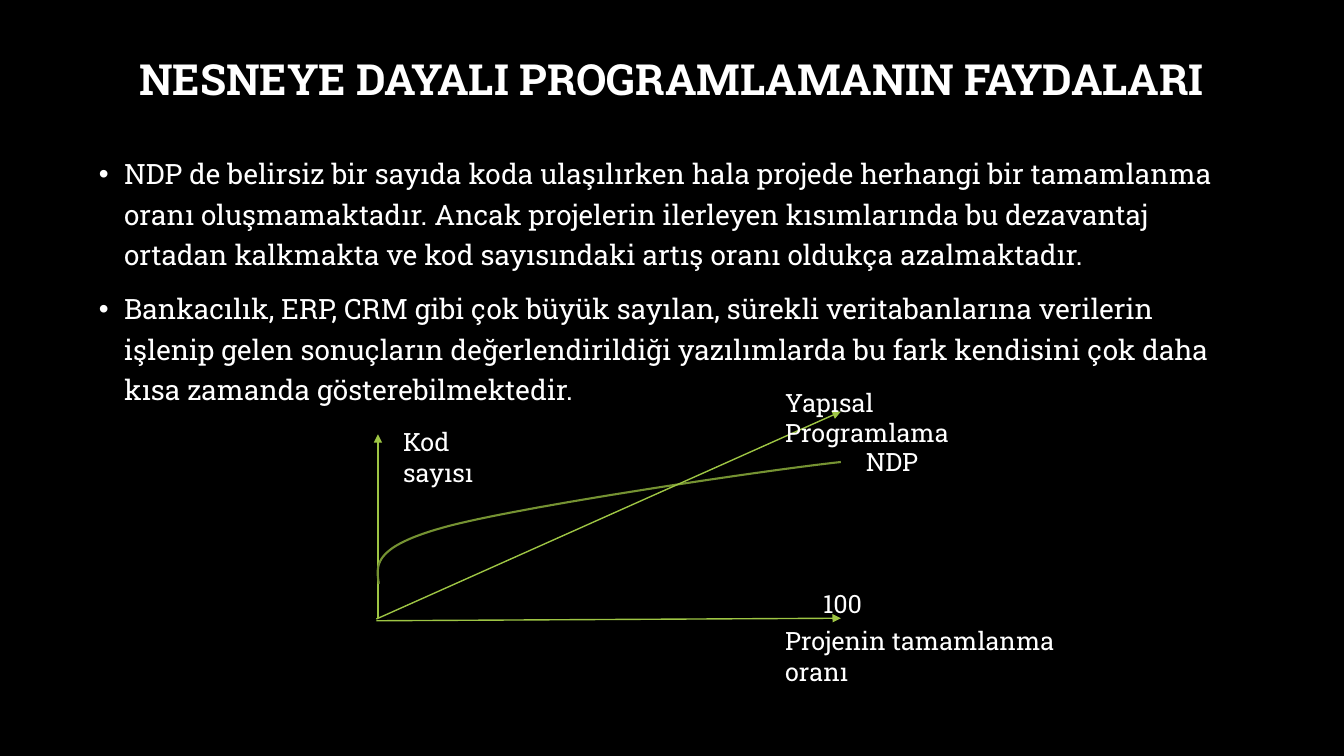
from dataclasses import dataclass

from lxml import etree
from pptx import Presentation
from pptx.dml.color import RGBColor
from pptx.enum.shapes import MSO_CONNECTOR
from pptx.enum.text import MSO_ANCHOR, MSO_AUTO_SIZE, PP_ALIGN
from pptx.oxml.ns import qn
from pptx.slide import Slide
from pptx.text.text import TextFrame, _Paragraph
from pptx.util import Emu, Inches, Pt

STRAIGHT = MSO_CONNECTOR.STRAIGHT
MIDDLE, TOP = MSO_ANCHOR.MIDDLE, MSO_ANCHOR.TOP
CENTER, LEFT = PP_ALIGN.CENTER, PP_ALIGN.LEFT
NO_AUTOFIT = MSO_AUTO_SIZE.NONE

SLIDE_WIDTH, SLIDE_HEIGHT = Inches(13.33), Inches(7.5)
COLUMNS, ROWS = 160, 90
FONT = "Roboto Slab"
BLACK, WHITE, LIME, OLIVE = "000000", "FFFFFF", "9EC544", "759232"

TITLE = "NESNEYE DAYALI PROGRAMLAMANIN FAYDALARI"
BENEFITS = (
    "NDP de belirsiz bir sayıda koda ulaşılırken hala projede herhangi bir "
    "tamamlanma oranı oluşmamaktadır. Ancak projelerin ilerleyen kısımlarında "
    "bu dezavantaj ortadan kalkmakta ve kod sayısındaki artış oranı oldukça "
    "azalmaktadır.",
    "Bankacılık, ERP, CRM gibi çok büyük sayılan, sürekli veritabanlarına "
    "verilerin işlenip gelen sonuçların değerlendirildiği yazılımlarda bu fark "
    "kendisini çok daha kısa zamanda gösterebilmektedir.",
)

Point = tuple[float, float]


@dataclass(frozen=True)
class Label:
    text: str
    column: float
    row: float
    columns: float


@dataclass(frozen=True)
class Arrow:
    start: Point
    end: Point


LABEL_ROWS = 4.8
LABELS = (
    Label("Projenin tamamlanma oranı", 92.3, 73.9, 36.7),
    Label("100", 96.8, 69.4, 7.1),
    Label("Kod sayısı", 46.8, 50.2, 14.4),
    Label("Yapısal Programlama", 92.3, 45.5, 31.7),
    Label("NDP", 101.9, 52.6, 10),
)
ARROWS = (
    Arrow((45, 73.6), (45, 51.7)),
    Arrow((44.8, 73.9), (100.1, 73.6)),
    Arrow((44.8, 73.7), (100.1, 49)),
)
NDP_CURVE = (
    ((45.1, 69.5), (44.75, 67.2), (44.4, 65), (53.5, 62.6)),
    ((53.5, 62.6), (62.7, 60.2), (90.9, 56), (100.1, 55)),
)
CURVE_STEPS = 30


def x(columns: float) -> Emu:
    return Emu(round(SLIDE_WIDTH * columns / COLUMNS))


def y(rows: float) -> Emu:
    return Emu(round(SLIDE_HEIGHT * rows / ROWS))


def color(value: str) -> RGBColor:
    return RGBColor.from_string(value)


def add_run(paragraph: _Paragraph, text: str, size: float, bold: bool = False) -> None:
    run = paragraph.add_run()
    run.text = text
    run.font.name = FONT
    run.font.size = Pt(size)
    run.font.bold = bold
    run.font.color.rgb = color(WHITE)


def add_text_frame(slide: Slide, column: float, row: float, columns: float, rows: float) -> TextFrame:
    text_frame = slide.shapes.add_textbox(x(column), y(row), x(columns), y(rows)).text_frame
    text_frame.word_wrap = True
    text_frame.vertical_anchor = TOP
    return text_frame


def add_title(slide: Slide) -> None:
    title = slide.shapes.title
    title.left, title.top, title.width, title.height = x(12), y(3.5), x(135.9), y(12.5)
    text_frame = title.text_frame
    text_frame.word_wrap = True
    text_frame.auto_size = NO_AUTOFIT
    text_frame.vertical_anchor = MIDDLE
    paragraph = text_frame.paragraphs[0]
    paragraph.alignment = CENTER
    paragraph.line_spacing = 0.9
    add_run(paragraph, TITLE, 30.6, bold=True)


def add_benefits(slide: Slide) -> None:
    text_frame = add_text_frame(slide, 10.6, 17.3, 138, 57.1)
    for index, benefit in enumerate(BENEFITS):
        paragraph = text_frame.add_paragraph() if index else text_frame.paragraphs[0]
        paragraph.alignment = LEFT
        paragraph.line_spacing = 1.2
        paragraph.space_before = Pt(10)
        properties = paragraph._p.get_or_add_pPr()
        properties.set("marL", str(Inches(0.25)))
        properties.set("indent", str(-Inches(0.25)))
        etree.SubElement(properties, qn("a:buFont"), typeface="Arial")
        etree.SubElement(properties, qn("a:buChar"), char="•")
        add_run(paragraph, benefit, 20)


def add_arrow(slide: Slide, arrow: Arrow) -> None:
    (start_column, start_row), (end_column, end_row) = arrow.start, arrow.end
    connector = slide.shapes.add_connector(
        STRAIGHT, x(start_column), y(start_row), x(end_column), y(end_row)
    )
    connector.line.color.rgb = color(LIME)
    connector.line.width = Pt(1)
    etree.SubElement(connector.line._get_or_add_ln(), qn("a:tailEnd"), type="triangle")
    etree.SubElement(connector._element.spPr, qn("a:effectLst"))


def bezier_point(controls: tuple[Point, ...], share: float) -> tuple[Emu, Emu]:
    rest = 1 - share
    weights = (rest**3, 3 * rest**2 * share, 3 * rest * share**2, share**3)
    column, row = (
        sum(weight * control[axis] for weight, control in zip(weights, controls))
        for axis in (0, 1)
    )
    return x(column), y(row)


def add_ndp_curve(slide: Slide) -> None:
    start, *points = [
        bezier_point(controls, step / CURVE_STEPS)
        for controls in NDP_CURVE
        for step in range(CURVE_STEPS + 1)
    ]
    builder = slide.shapes.build_freeform(*start)
    builder.add_line_segments(points, close=False)
    curve = builder.convert_to_shape()
    curve.shadow.inherit = False
    curve.fill.background()
    curve.line.color.rgb = color(OLIVE)
    curve.line.width = Pt(1.5)


def add_label(slide: Slide, label: Label) -> None:
    text_frame = add_text_frame(slide, label.column, label.row, label.columns, LABEL_ROWS)
    add_run(text_frame.paragraphs[0], label.text, 18)


def main() -> None:
    presentation = Presentation()
    presentation.slide_width, presentation.slide_height = SLIDE_WIDTH, SLIDE_HEIGHT
    slide = presentation.slides.add_slide(presentation.slide_layouts.get_by_name("Title Only"))
    slide.background.fill.solid()
    slide.background.fill.fore_color.rgb = color(BLACK)
    add_title(slide)
    add_benefits(slide)
    vertical_axis, horizontal_axis, structured_line = ARROWS
    add_arrow(slide, vertical_axis)
    add_arrow(slide, horizontal_axis)
    add_ndp_curve(slide)
    add_arrow(slide, structured_line)
    for label in LABELS:
        add_label(slide, label)
    presentation.save("out.pptx")


if __name__ == "__main__":
    main()
